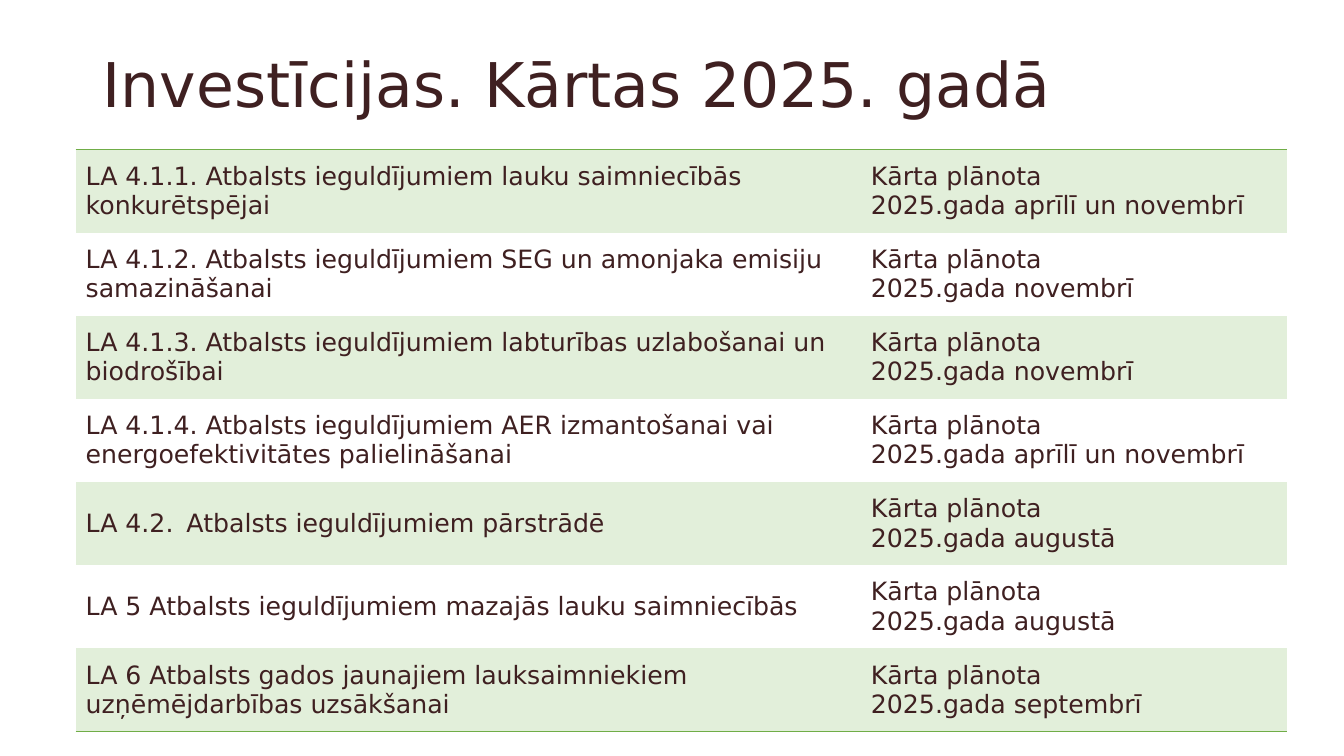
"""Build the slide listing the 2025 investment support rounds."""
import lxml.etree
import pptx
import pptx.dml.color
import pptx.enum.text
import pptx.oxml.ns
import pptx.util

TITLE = "Investīcijas. Kārtas 2025. gadā"
PLANNED = "Kārta plānota"
ROUNDS = [
    ("LA 4.1.1. Atbalsts ieguldījumiem lauku saimniecībās konkurētspējai", "2025.gada aprīlī un novembrī"),
    ("LA 4.1.2. Atbalsts ieguldījumiem SEG un amonjaka emisiju samazināšanai", "2025.gada novembrī"),
    ("LA 4.1.3. Atbalsts ieguldījumiem labturības uzlabošanai un biodrošībai", "2025.gada novembrī"),
    ("LA 4.1.4. Atbalsts ieguldījumiem AER izmantošanai vai energoefektivitātes palielināšanai",
     "2025.gada aprīlī un novembrī"),
    ("LA 4.2.\tAtbalsts ieguldījumiem pārstrādē", "2025.gada augustā"),
    ("LA 5 Atbalsts ieguldījumiem mazajās lauku saimniecībās", "2025.gada augustā"),
    ("LA 6 Atbalsts gados jaunajiem lauksaimniekiem uzņēmējdarbības uzsākšanai", "2025.gada septembrī"),
]
COLORS = {"text": "3F2021", "band": "E2EFDA", "rule": "70AD47"}
FONT = "DejaVu Sans"
COLUMNS = (560.9, 304.6)
ROW_HEIGHT = 59.4

Pt = pptx.util.Pt
MIDDLE = pptx.enum.text.MSO_ANCHOR.MIDDLE


def rgb(name):
    """Return a palette colour."""
    return pptx.dml.color.RGBColor.from_string(COLORS[name])


def write(tf, lines, size):
    """Write lines as paragraphs in the slide font."""
    for i, line in enumerate(lines):
        p = tf.paragraphs[0] if i == 0 else tf.add_paragraph()
        p.alignment = pptx.enum.text.PP_ALIGN.LEFT
        r = p.add_run()
        r.text = line
        r.font.name = FONT
        r.font.size = Pt(size)
        r.font.color.rgb = rgb("text")


def set_borders(cell, ruled):
    """Draw the ruled sides of a cell and clear the others."""
    qn = pptx.oxml.ns.qn
    tc_pr = cell._tc.get_or_add_tcPr()
    for side in "LRTB":
        ln = lxml.etree.SubElement(tc_pr, qn(f"a:ln{side}"), w=str(Pt(1)))
        if side in ruled:
            fill = lxml.etree.SubElement(ln, qn("a:solidFill"))
            lxml.etree.SubElement(fill, qn("a:srgbClr"), val=COLORS["rule"])
        else:
            lxml.etree.SubElement(ln, qn("a:noFill"))


def add_title(s):
    """Place and format the slide title."""
    sp = s.shapes.title
    sp.left, sp.top, sp.width, sp.height = Pt(66.24), Pt(10.08), Pt(828), Pt(104.4)
    tf = sp.text_frame
    tf.word_wrap = True
    tf.vertical_anchor = MIDDLE
    write(tf, [TITLE], 44)
    tf.paragraphs[0].line_spacing = 0.9


def add_rounds(s):
    """Add the banded table of rounds."""
    last = len(ROUNDS) - 1
    table = s.shapes.add_table(
        len(ROUNDS), len(COLUMNS), Pt(54), Pt(106.8), Pt(sum(COLUMNS)), Pt(ROW_HEIGHT * len(ROUNDS))
    ).table
    table.first_row = table.horz_banding = False
    for column, width in zip(table.columns, COLUMNS):
        column.width = Pt(width)
    for i, (measure, date) in enumerate(ROUNDS):
        table.rows[i].height = Pt(ROW_HEIGHT)
        ruled = {0: "T", last: "B"}.get(i, "")
        for cell, lines in zip(table.rows[i].cells, ([measure], [PLANNED, date])):
            cell.vertical_anchor = MIDDLE
            write(cell.text_frame, lines, 18)
            set_borders(cell, ruled)
            if i % 2 == 0:
                cell.fill.solid()
                cell.fill.fore_color.rgb = rgb("band")
            else:
                cell.fill.background()


def main():
    """Create and save the presentation."""
    prs = pptx.Presentation()
    prs.slide_width, prs.slide_height = Pt(960), Pt(540)
    s = prs.slides.add_slide(prs.slide_layouts[5])
    add_title(s)
    add_rounds(s)
    prs.save("out.pptx")


if __name__ == "__main__":
    main()
